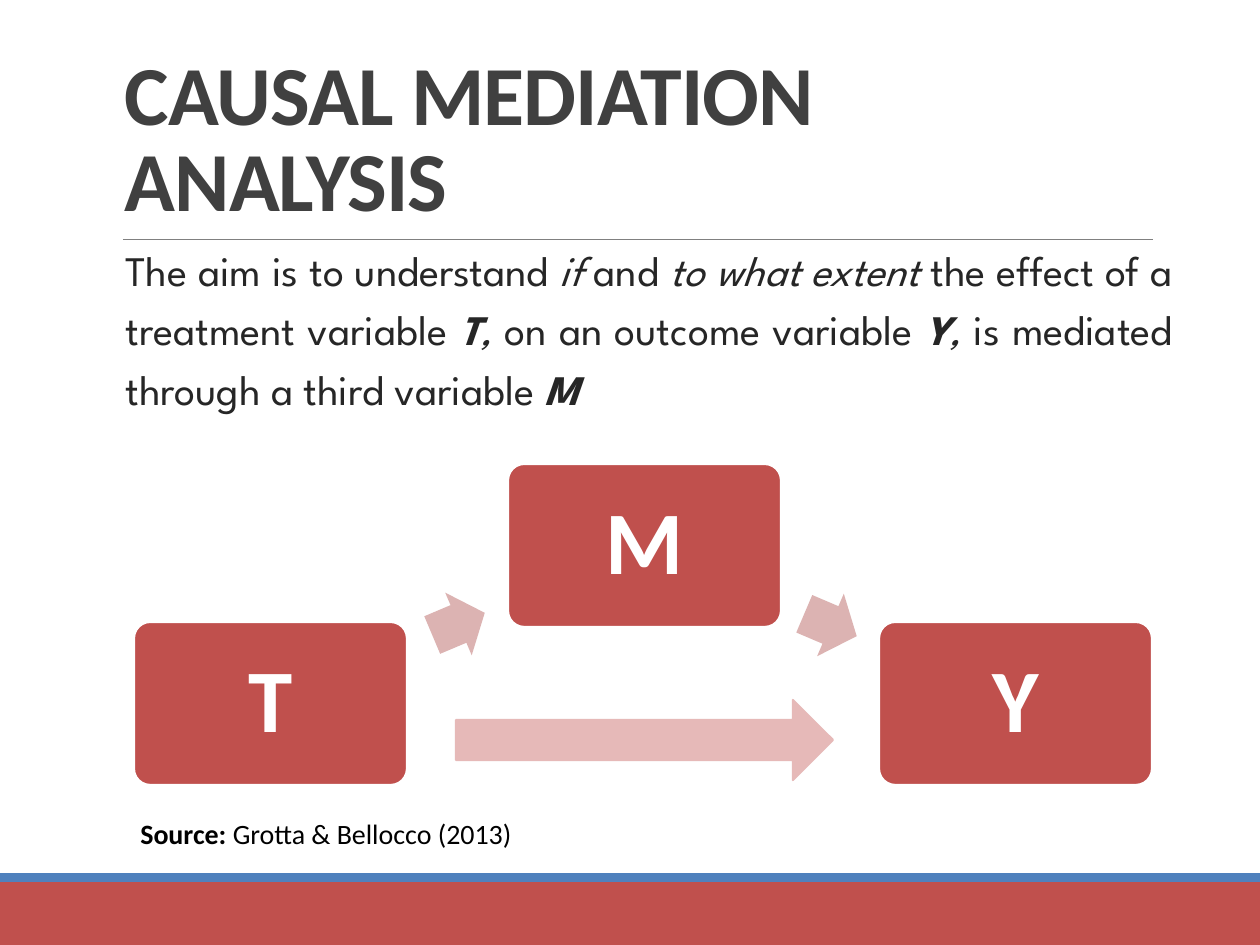
"""Build the causal mediation analysis slide."""
from lxml import etree
from pptx import Presentation
from pptx.dml.color import RGBColor
from pptx.enum.shapes import MSO_CONNECTOR, MSO_SHAPE
from pptx.enum.text import MSO_ANCHOR, MSO_AUTO_SIZE, PP_ALIGN
from pptx.oxml.ns import qn
from pptx.util import Emu, Pt

RECTANGLE = MSO_SHAPE.RECTANGLE
ROUNDED = MSO_SHAPE.ROUNDED_RECTANGLE
ARROW = MSO_SHAPE.RIGHT_ARROW
STRAIGHT = MSO_CONNECTOR.STRAIGHT
BOTTOM, MIDDLE = MSO_ANCHOR.BOTTOM, MSO_ANCHOR.MIDDLE
LEFT, CENTER, JUSTIFY = PP_ALIGN.LEFT, PP_ALIGN.CENTER, PP_ALIGN.JUSTIFY
NO_FIT = MSO_AUTO_SIZE.NONE

RED = RGBColor(0xC0, 0x50, 0x4D)
BLUE = RGBColor(0x4F, 0x81, 0xBD)
GRAY = RGBColor(0x80, 0x80, 0x80)
DARK = RGBColor(0x40, 0x40, 0x40)
INK = RGBColor(0x26, 0x26, 0x26)
BLACK = RGBColor(0x00, 0x00, 0x00)
WHITE = RGBColor(0xFF, 0xFF, 0xFF)
DUSTY_PINK = RGBColor(0xDC, 0xB3, 0xB2)
PINK = RGBColor(0xE6, 0xB9, 0xB8)


def px(*lengths):
    return [Emu(round(length * 914400 / 126)) for length in lengths]


def add_shape(kind, place, fill, line=None):
    shape = page.shapes.add_shape(kind, *px(*place))
    shape.shadow.inherit = False
    shape.fill.solid()
    shape.fill.fore_color.rgb = fill
    if line is None:
        shape.line.fill.background()
    else:
        shape.line.color.rgb = line
        shape.line.width = Pt(1.25)
    return shape


deck = Presentation()
deck.slide_width, deck.slide_height = px(1260, 945)
page = deck.slides.add_slide(deck.slide_layouts[5])

add_shape(RECTANGLE, (0, 882, 1260, 63), RED)
add_shape(RECTANGLE, (0, 873, 1260, 9), BLUE)
rule = page.shapes.add_connector(STRAIGHT, *px(123, 239, 1153, 239))
rule.line.color.rgb = GRAY
rule.line.width = Pt(0.5)
etree.SubElement(rule._element.spPr, qn("a:effectLst"))

title = page.shapes.title
title.left, title.top, title.width, title.height = px(112, 35, 1040, 200)
title.text_frame.text = "CAUSAL MEDIATION ANALYSIS"
title.text_frame.auto_size = NO_FIT
title.text_frame.vertical_anchor = BOTTOM
para = title.text_frame.paragraphs[0]
para.alignment = LEFT
para.line_spacing = 0.85
span = para.runs[0]
span.font.name = "Calibri"
span.font.size = Pt(48)
span.font.bold = True
span.font.color.rgb = DARK
span._r.get_or_add_rPr().set("spc", "-50")

AIM = [
    ("The aim is to understand", False, False),
    (" if ", False, True),
    ("and ", False, False),
    ("to what extent ", False, True),
    ("the effect of a treatment variable ", False, False),
    ("T", True, True),
    (",", False, True),
    (" on an outcome variable ", False, False),
    ("Y", True, True),
    (",", False, True),
    (" is mediated through a third variable ", False, False),
    ("M", True, True),
]
SOURCE = [("Source: ", True, False), ("Grotta & Bellocco (2013)", False, False)]
TEXTS = [
    ((113, 229, 1072, 192), AIM, "League Spartan", 24, INK, JUSTIFY, Pt(34)),
    ((128, 810, 655, 47), SOURCE, "Calibri", 16, BLACK, LEFT, 1.0),
]
for place, pieces, font, size, color, alignment, spacing in TEXTS:
    box = page.shapes.add_textbox(*px(*place))
    box.text_frame.word_wrap = True
    para = box.text_frame.paragraphs[0]
    para.alignment = alignment
    para.line_spacing = spacing
    for words, bold, italic in pieces:
        span = para.add_run()
        span.text = words
        span.font.name = font
        span.font.size = Pt(size)
        span.font.color.rgb = color
        span.font.bold = bold
        span.font.italic = italic

for letter, left, top in [("T", 134, 622), ("M", 508, 464), ("Y", 879, 622)]:
    box = add_shape(ROUNDED, (left, top, 273, 163), RED, WHITE)
    box.adjustments[0] = 0.1
    box.text_frame.text = letter
    box.text_frame.vertical_anchor = MIDDLE
    para = box.text_frame.paragraphs[0]
    para.alignment = CENTER
    para.line_spacing = 0.9
    span = para.runs[0]
    span.font.name = "Calibri"
    span.font.size = Pt(51)
    span.font.bold = True
    span.font.color.rgb = WHITE

for left, top, angle in [(430, 590, 337.1), (802, 591, 23.1)]:
    arrow = add_shape(ARROW, (left, top, 57, 68), DUSTY_PINK)
    arrow.adjustments[0] = 0.6
    arrow.adjustments[1] = 0.5
    arrow.rotation = angle
add_shape(ARROW, (456, 700, 377, 80), PINK, PINK)

deck.save("out.pptx")
